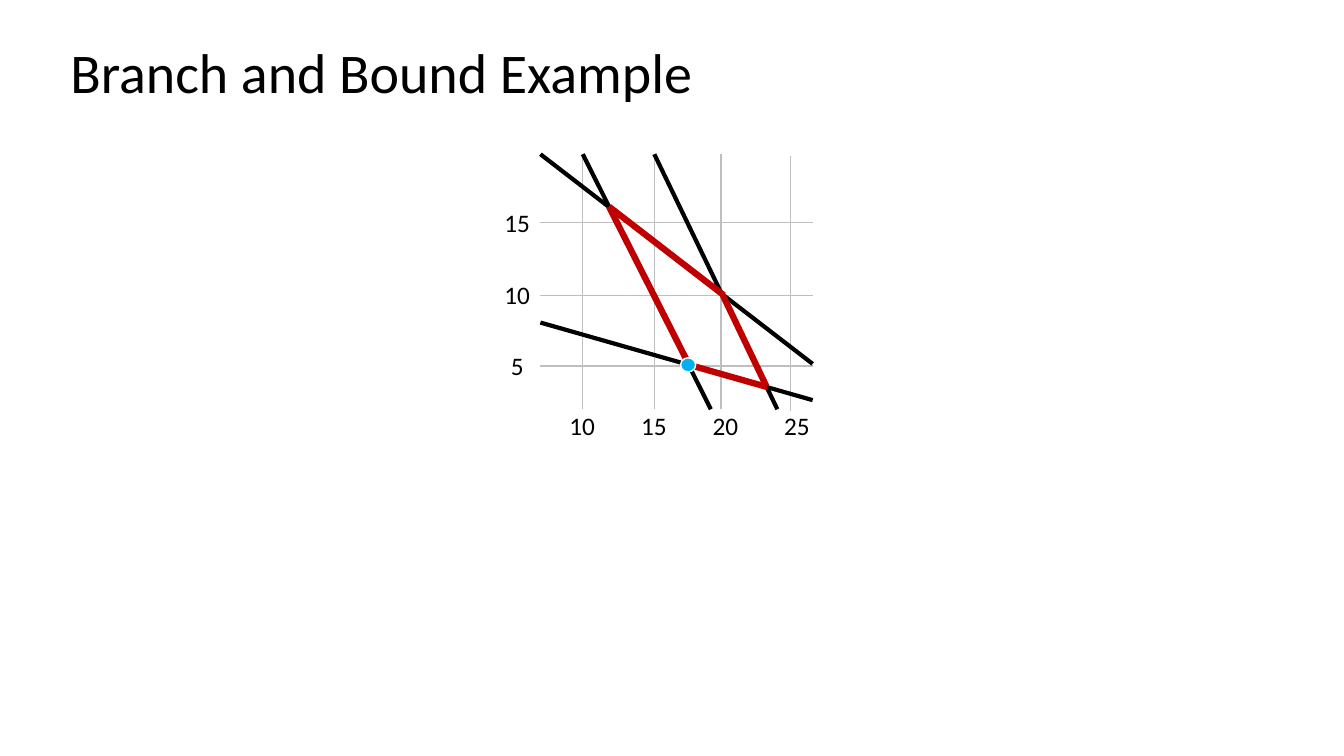
"""Build the branch and bound slide: a feasible region on a small grid."""
from pptx import Presentation
from pptx.dml.color import RGBColor
from pptx.enum.shapes import MSO_CONNECTOR, MSO_SHAPE
from pptx.enum.text import MSO_ANCHOR, MSO_AUTO_SIZE, PP_ALIGN
from pptx.oxml.ns import qn
from pptx.util import Inches, Pt
from lxml.etree import SubElement

TITLE = "Branch and Bound Example"
FONT = "Calibri"
BLACK, GREY, RED, BLUE, WHITE = "000000", "BFBFBF", "C00000", "00B0F0", "FFFFFF"

LEFT, RIGHT, TOP, BOTTOM = 5.36, 8.06, 1.53, 4.06
GRID_COLUMNS = [(6.49, 0), (7.15, 0), (5.78, 0), (7.84, 0.02)]
GRID_ROWS = [2.21, 2.93, 3.63]
CONSTRAINTS = [
    (5.78, TOP, 7.05, BOTTOM),
    (LEFT, TOP, RIGHT, 3.61),
    (LEFT, 3.2, RIGHT, 3.97),
    (6.49, TOP, 7.71, BOTTOM),
]
REGION_EDGES = [
    (6.04, 2.05, 6.84, 3.63),
    (6.04, 2.05, 7.18, 2.93),
    (6.8, 3.61, 7.61, 3.84),
    (7.17, 2.93, 7.6, 3.83),
]
X_LABELS = ["10", "15", "20", "25"]
Y_LABELS = ["5", "10", "15"]
LABEL_STEP, LABEL_HEIGHT = 0.71, 0.4
LABEL_WIDTHS = {1: 0.33, 2: 0.46}
X_LABEL_CENTER, X_LABEL_TOP = 5.78, 4.02
Y_LABEL_CENTER, Y_LABEL_TOP = 5.13, 3.43
OPTIMUM = (6.75, 3.55, 0.15, 0.14)


def color(value):
    return RGBColor.from_string(value)


def add_line(shapes, ends, stroke, width):
    line = shapes.add_connector(MSO_CONNECTOR.STRAIGHT, *map(Inches, ends))
    line.line.color.rgb = color(stroke)
    line.line.width = Pt(width)
    SubElement(line._element.spPr, qn("a:effectLst"))


def add_text(shapes, text, place, size, align=PP_ALIGN.LEFT, wrap=False,
             anchor=MSO_ANCHOR.TOP, spacing=1.0):
    box = shapes.add_textbox(*map(Inches, place))
    frame = box.text_frame
    frame.word_wrap = wrap
    frame.auto_size = MSO_AUTO_SIZE.NONE if wrap else MSO_AUTO_SIZE.SHAPE_TO_FIT_TEXT
    frame.vertical_anchor = anchor
    para = frame.paragraphs[0]
    para.alignment = align
    para.line_spacing = spacing
    span = para.add_run()
    span.text = text
    span.font.name = FONT
    span.font.size = Pt(size)
    span.font.color.rgb = color(BLACK)


def add_label(shapes, text, center, top, align=PP_ALIGN.LEFT):
    width = LABEL_WIDTHS[len(text)]
    add_text(shapes, text, (center - width / 2, top, width, LABEL_HEIGHT), 18, align=align)


def add_graph(shapes):
    columns = [(x, TOP + shift, x, BOTTOM + shift) for x, shift in GRID_COLUMNS]
    rows = [(LEFT, y, RIGHT, y) for y in GRID_ROWS]
    for ends in columns + rows:
        add_line(shapes, ends, GREY, 1)
    for ends in CONSTRAINTS:
        add_line(shapes, ends, BLACK, 3)
    for index, text in enumerate(X_LABELS):
        add_label(shapes, text, X_LABEL_CENTER + index * LABEL_STEP, X_LABEL_TOP)
    for index, text in enumerate(Y_LABELS):
        add_label(shapes, text, Y_LABEL_CENTER, Y_LABEL_TOP - index * LABEL_STEP,
                  align=PP_ALIGN.CENTER)


def add_optimum(shapes):
    dot = shapes.add_shape(MSO_SHAPE.OVAL, *map(Inches, OPTIMUM))
    dot.shadow.inherit = False
    dot.fill.solid()
    dot.fill.fore_color.rgb = color(BLUE)
    dot.line.color.rgb = color(WHITE)
    dot.line.width = Pt(1)


def main():
    deck = Presentation()
    deck.slide_width, deck.slide_height = Inches(13.33), Inches(7.5)
    page = deck.slides.add_slide(deck.slide_layouts[6])
    add_text(page.shapes, TITLE, (0.6, 0.4, 11.5, 0.69), 40, wrap=True,
             anchor=MSO_ANCHOR.MIDDLE, spacing=0.9)
    add_graph(page.shapes.add_group_shape().shapes)
    for ends in REGION_EDGES:
        add_line(page.shapes, ends, RED, 4.5)
    add_optimum(page.shapes)
    deck.save("out.pptx")


if __name__ == "__main__":
    main()
